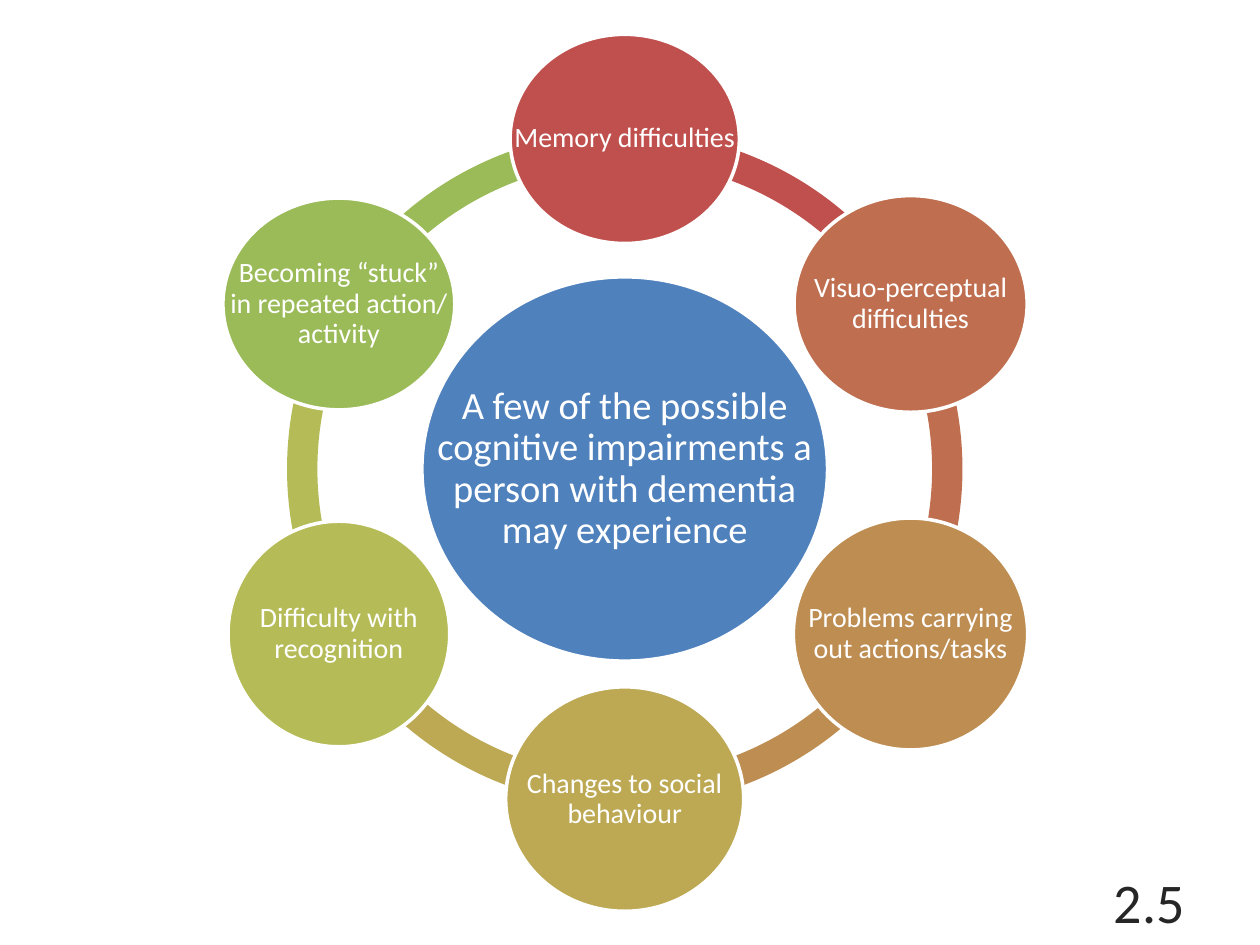
from math import cos, radians, sin

from pptx import Presentation
from pptx.dml.color import RGBColor
from pptx.enum.shapes import MSO_SHAPE
from pptx.enum.text import MSO_ANCHOR, PP_ALIGN
from pptx.util import Pt

OVAL, ARC = MSO_SHAPE.OVAL, MSO_SHAPE.BLOCK_ARC
MIDDLE = MSO_ANCHOR.MIDDLE
CENTER, RIGHT = PP_ALIGN.CENTER, PP_ALIGN.RIGHT
WHITE, BLUE, DARK = "FFFFFF", "4F81BD", "262626"


def color(code):
    return RGBColor.from_string(code)


class Canvas:
    """Holds the style and the current slide."""

    font = "Calibri"

    def __init__(self, slide):
        self.slide = slide

    def shape(self, kind, mid_x, mid_y, width, height, fill):
        item = self.slide.shapes.add_shape(
            kind, Pt(mid_x - width / 2), Pt(mid_y - height / 2),
            Pt(width), Pt(height))
        item.shadow.inherit = False
        item.fill.solid()
        item.fill.fore_color.rgb = color(fill)
        item.line.fill.background()
        return item

    def arc(self, mid_x, mid_y, size, start, sweep, fill):
        item = self.shape(ARC, mid_x, mid_y, size, size, fill)
        # Angles are stored in 60000ths of a degree, scaled here by 100000
        item.adjustments[0] = start % 360 * 0.6
        item.adjustments[1] = (start + sweep) % 360 * 0.6
        item.adjustments[2] = 0.045

    def text(self, left, top, width, height, words, size, ink=WHITE,
             align=CENTER, inset=None, leading=None):
        box = self.slide.shapes.add_textbox(
            Pt(left), Pt(top), Pt(width), Pt(height))
        frame = box.text_frame
        frame.word_wrap = True
        frame.vertical_anchor = MIDDLE
        if inset is not None:
            frame.margin_left = frame.margin_right = Pt(inset)
            frame.margin_top = frame.margin_bottom = Pt(inset)
        para = frame.paragraphs[0]
        para.alignment = align
        para.line_spacing = leading
        run = para.add_run()
        run.text = words
        run.font.name = self.font
        run.font.size = Pt(size)
        run.font.color.rgb = color(ink)

    def node(self, mid_x, mid_y, width, height, fill, words, size, inset):
        item = self.shape(OVAL, mid_x, mid_y, width, height, fill)
        item.line.color.rgb = color(WHITE)
        item.line.width = Pt(2)
        # The label spans the full width of the oval
        self.text(mid_x - width / 2, mid_y - height / 2, width, height,
                  words, size, inset=inset, leading=0.9)


# Clockwise from the top: words, fill, width, height
NODES = [
    ("Memory difficulties", "C0504D", 131, 119.5),
    ("Visuo-perceptual difficulties", "BF6F4F", 133.2, 123.8),
    ("Problems carrying out actions/tasks", "BE8D52", 133.9, 132.5),
    ("Changes to social behaviour", "BDA954", 136, 128.2),
    ("Difficulty with recognition", "B5BC57", 126.7, 128.9),
    ("Becoming “stuck” in repeated action/ activity", "9BBB59", 132.5, 121),
]
MID_X, MID_Y = 357, 268
RADIUS, RING = 188.6, 386
STEP = 360 / len(NODES)


def main():
    deck = Presentation()
    deck.slide_width, deck.slide_height = Pt(720), Pt(540)
    page = Canvas(deck.slides.add_slide(deck.slide_layouts[6]))

    # Ring of arcs
    for i, (_, fill, _, _) in enumerate(NODES):
        page.arc(MID_X, MID_Y, RING, 270 + i * STEP, STEP, fill)

    # Centre
    page.node(MID_X, MID_Y, 231.8, 219.6, BLUE,
              "A few of the possible cognitive impairments "
              "a person with dementia may experience", 22, 2)

    # Outer nodes
    for i, (words, fill, width, height) in enumerate(NODES):
        turn = radians(270 + i * STEP)
        page.node(MID_X + RADIUS * cos(turn), MID_Y + RADIUS * sin(turn),
                  width, height, fill, words, 16, 1.5)

    # Slide number
    page.text(516, 500.4, 168, 28.8, "2.5", 32, DARK, RIGHT)

    deck.save("out.pptx")


if __name__ == "__main__":
    main()
